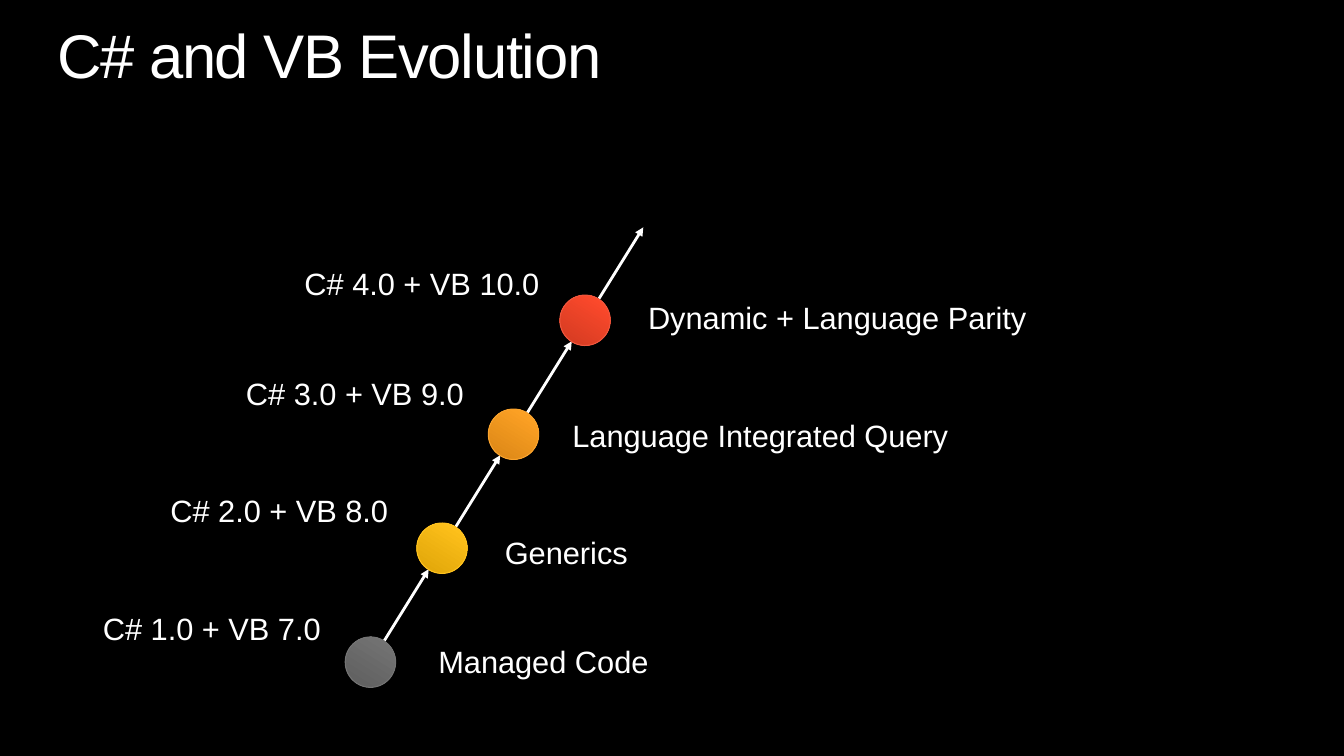
from pptx import Presentation
from pptx.dml.color import RGBColor
from pptx.enum.dml import MSO_LINE
from pptx.enum.shapes import MSO_CONNECTOR, MSO_SHAPE
from pptx.enum.text import MSO_ANCHOR, MSO_AUTO_SIZE, PP_ALIGN
from pptx.oxml.ns import qn
from pptx.util import Pt
from lxml.etree import SubElement

COLORS = {"background": "000000", "text": "FFFFFF", "arrow": "FFFFFF"}
FONT = "Arial"
LABEL_HEIGHT = 33.8
DOT_SIZE = 36
FIRST_CENTER = (264.6, 473)
STEP = (51.1, -81.4)
ARROW_START = (9.8, -15.2)
ARROW_END = (41.6, -66.4)

# version, (right, top), feature, (left, top, width), (dark, light, outline)
MILESTONES = [
    ("C# 1.0 + VB 7.0", (236.2, 432), "Managed Code", (306, 455.8, 397.4),
     ("595959", "737373", "747474")),
    ("C# 2.0 + VB 8.0", (284.4, 347.8), "Generics", (353.5, 378, 370),
     ("D79D03", "FFC21C", "FFC21F")),
    ("C# 3.0 + VB 9.0", (338.4, 264.2), "Language Integrated Query", (401.8, 293.8, 336.2),
     ("D17F11", "FFA326", "F9A32E")),
    ("C# 4.0 + VB 10.0", (392.4, 185.8), "Dynamic + Language Parity", (455.8, 210.2, 291.6),
     ("C7371F", "FF4A2C", "F0573E")),
]


def rgb(name):
    return RGBColor.from_string(COLORS.get(name, name))


def add_run(paragraph, text, size):
    run = paragraph.add_run()
    run.text = text
    run.font.name = FONT
    run.font.size = Pt(size)
    run.font.color.rgb = rgb("text")
    return run


def fill_title(slide, text):
    title = slide.shapes.title
    title.left, title.top, title.width, title.height = Pt(41), Pt(18), Pt(877.7), Pt(48)
    frame = title.text_frame
    frame.margin_left = frame.margin_top = frame.margin_right = frame.margin_bottom = 0
    frame.vertical_anchor = MSO_ANCHOR.TOP
    frame.auto_size = MSO_AUTO_SIZE.NONE
    paragraph = frame.paragraphs[0]
    paragraph.alignment = PP_ALIGN.LEFT
    paragraph.line_spacing = 0.9
    run = add_run(paragraph, text, 44)
    run.font._element.set("spc", "-100")


def add_label(slide, text, left, top, width, align, wrap):
    label = slide.shapes.add_textbox(Pt(left), Pt(top), Pt(width), Pt(LABEL_HEIGHT))
    frame = label.text_frame
    frame.word_wrap = wrap
    paragraph = frame.paragraphs[0]
    paragraph.alignment = align
    add_run(paragraph, text, 22)


def add_arrow(slide, start, end):
    arrow = slide.shapes.add_connector(
        MSO_CONNECTOR.STRAIGHT, *(Pt(value) for value in (*start, *end)))
    arrow.line.color.rgb = rgb("arrow")
    arrow.line.width = Pt(2)
    SubElement(arrow.line._get_or_add_ln(), qn("a:tailEnd"), type="triangle")
    SubElement(arrow._element.spPr, qn("a:effectLst"))


def add_dot(slide, center, dark, light, outline):
    left, top = (value - DOT_SIZE / 2 for value in center)
    dot = slide.shapes.add_shape(
        MSO_SHAPE.OVAL, Pt(left), Pt(top), Pt(DOT_SIZE), Pt(DOT_SIZE))
    dot.rotation = 32
    dot.shadow.inherit = False
    dot.fill.gradient()
    dot.fill.gradient_angle = 90
    for stop, color, position in zip(dot.fill.gradient_stops, (dark, light), (0, 0.8)):
        stop.color.rgb = rgb(color)
        stop.position = position
    dot.line.color.rgb = rgb(outline)
    dot.line.width = Pt(0.75)
    dot.line.dash_style = MSO_LINE.SOLID


def shift(point, offset):
    return point[0] + offset[0], point[1] + offset[1]


def main():
    deck = Presentation()
    deck.slide_width, deck.slide_height = Pt(960), Pt(540)
    slide = deck.slides.add_slide(deck.slide_layouts.get_by_name("Title Only"))
    slide.background.fill.solid()
    slide.background.fill.fore_color.rgb = rgb("background")
    fill_title(slide, "C# and VB Evolution")

    center = FIRST_CENTER
    version_width = 183.6
    for version, (right, version_top), feature, feature_box, dot_colors in MILESTONES:
        add_label(slide, version, right - version_width, version_top, version_width,
                  PP_ALIGN.RIGHT, wrap=True)
        add_label(slide, feature, *feature_box, PP_ALIGN.LEFT, wrap=True)
        add_arrow(slide, shift(center, ARROW_START), shift(center, ARROW_END))
        add_dot(slide, center, *dot_colors)
        center = shift(center, STEP)

    deck.save("out.pptx")


if __name__ == "__main__":
    main()
